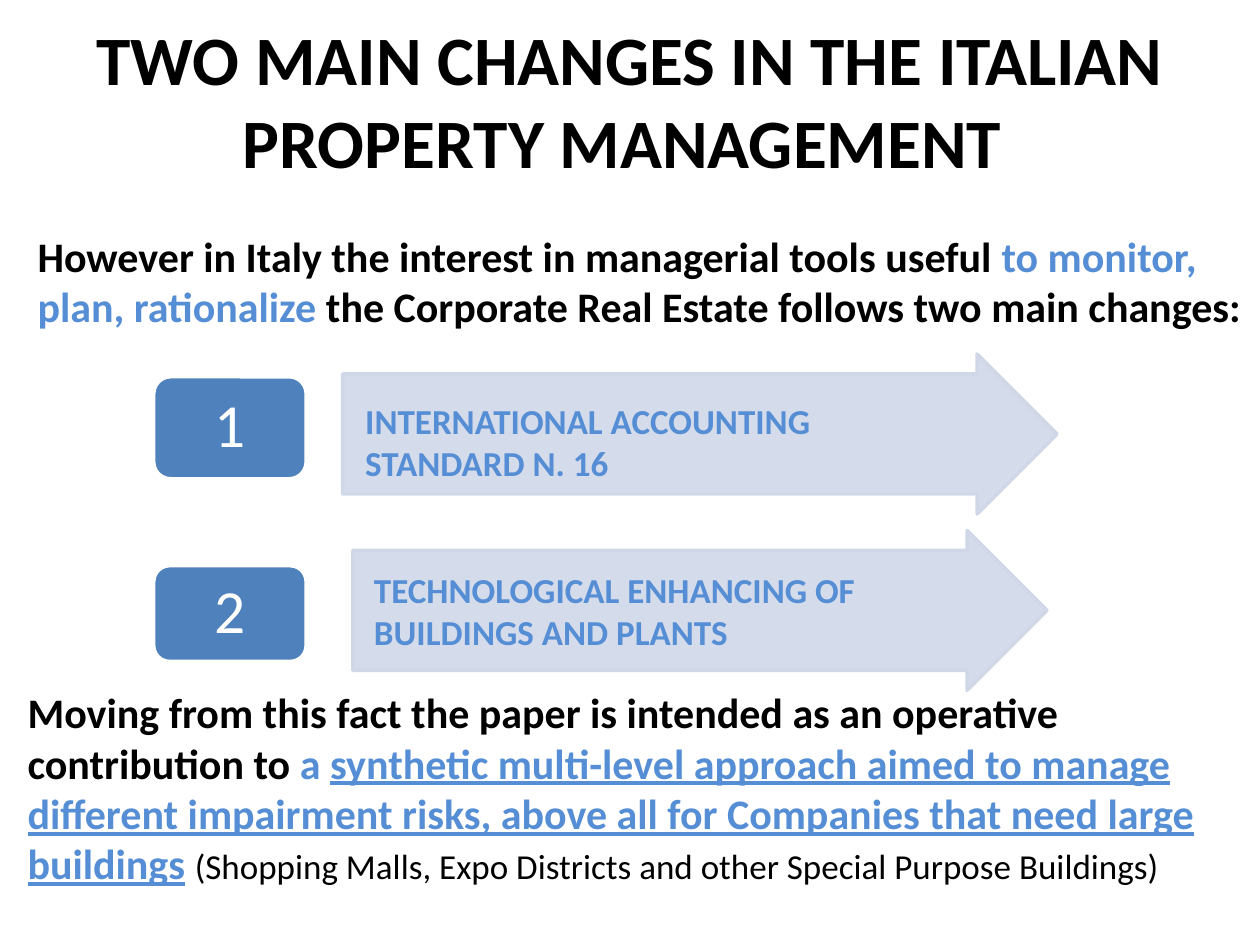
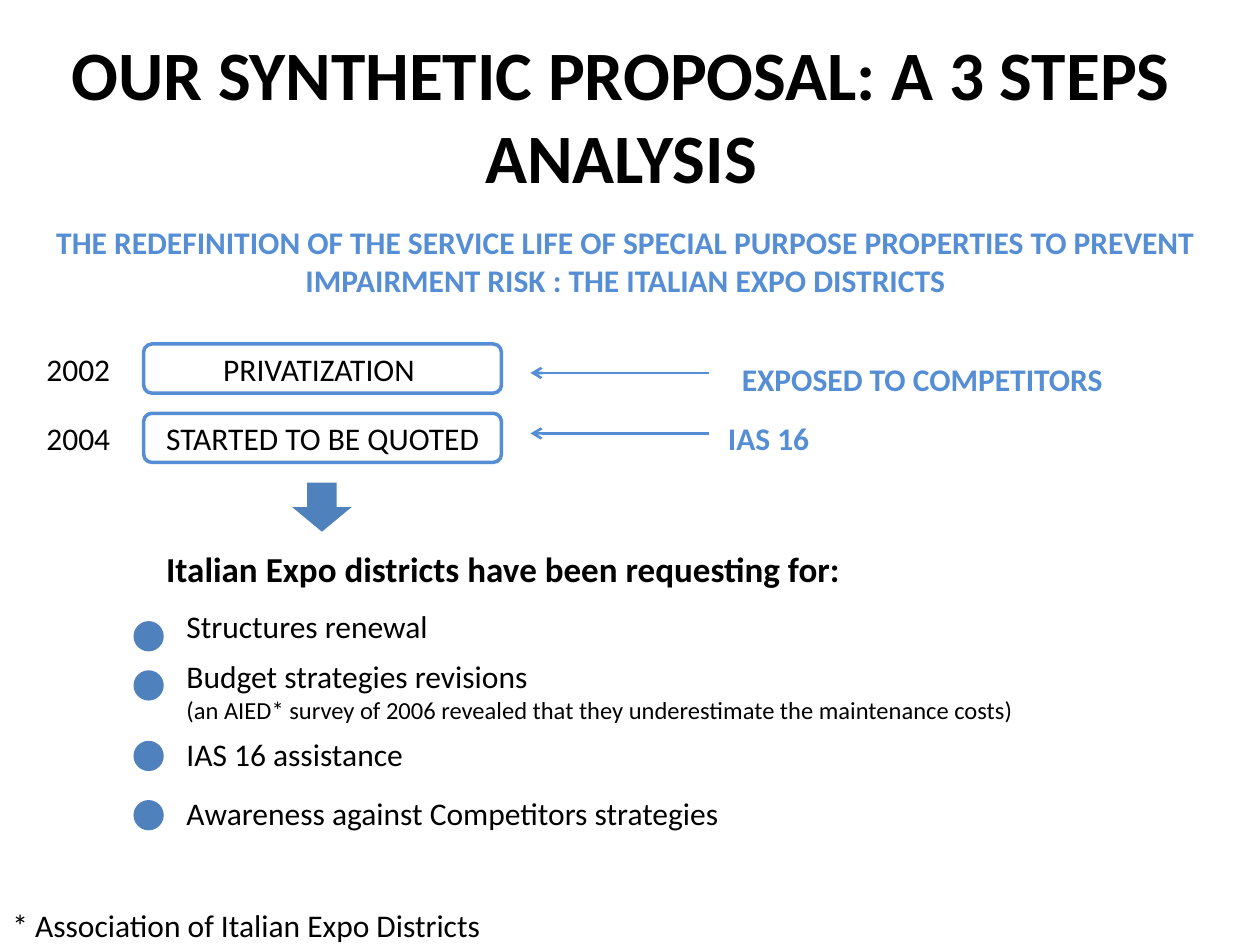
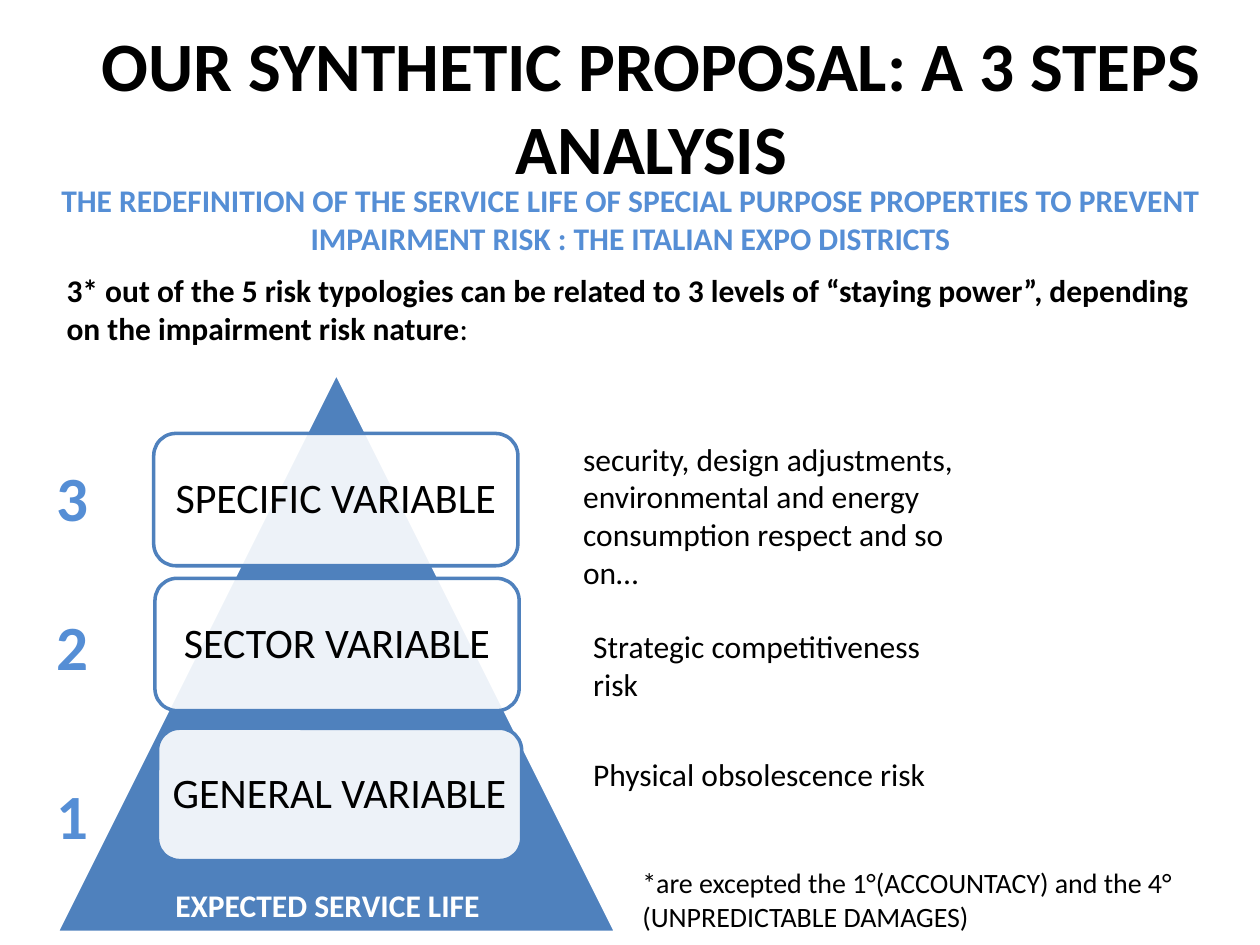
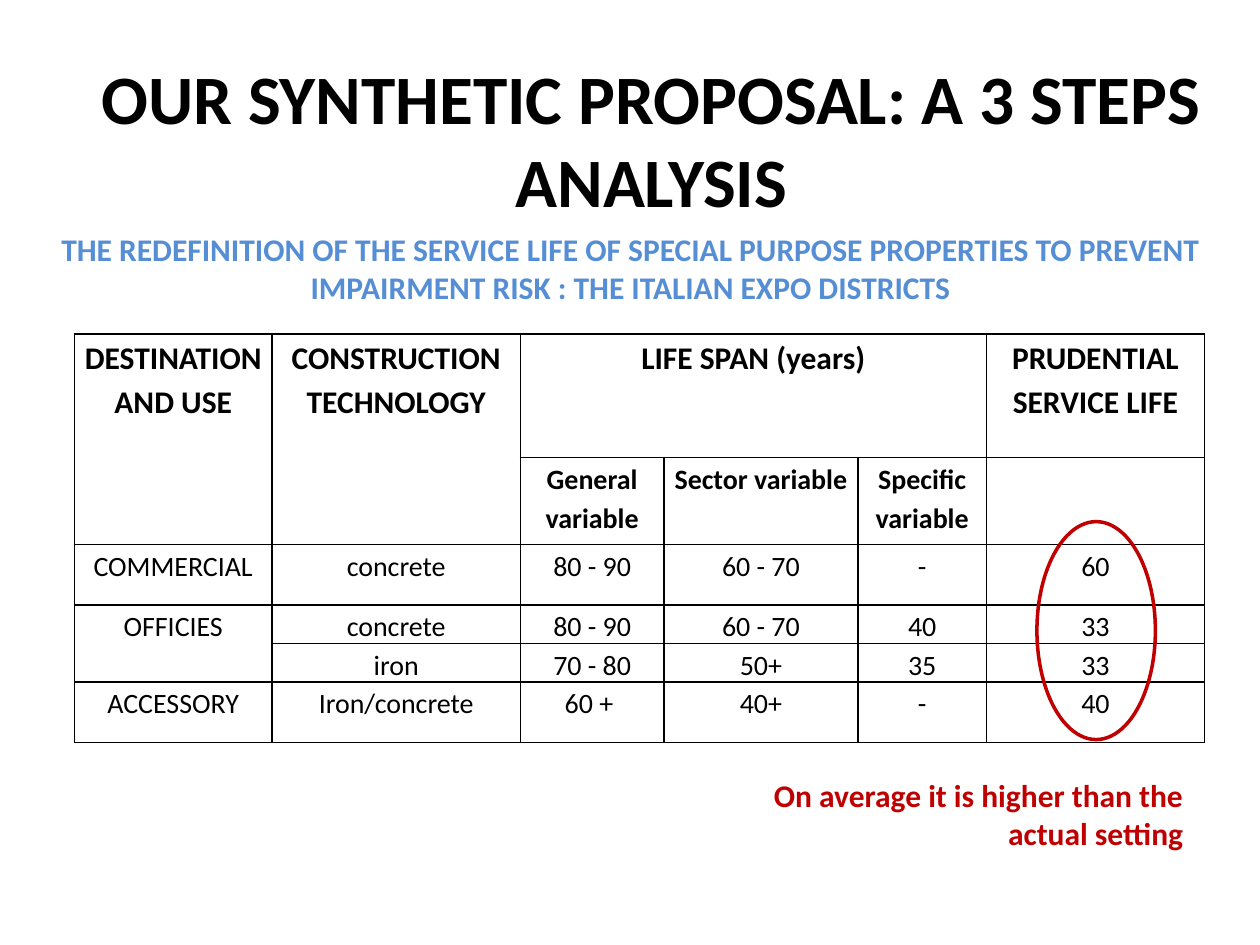
"""Build four slides on Italian property management and service life analysis."""
import lxml.etree
import pptx
import pptx.dml.color
import pptx.enum.shapes
import pptx.enum.text
import pptx.oxml.ns
import pptx.util

color = pptx.dml.color.RGBColor.from_string
qn = pptx.oxml.ns.qn
SubElement = lxml.etree.SubElement
Pt = pptx.util.Pt
SHAPE = pptx.enum.shapes.MSO_SHAPE
ALIGN = pptx.enum.text.PP_ALIGN

FONT = "Calibri"
BLACK, WHITE, RED = "000000", "FFFFFF", "C00000"
ACCENT, BLUE, PALE = "558ED5", "4F81BD", "D0D8E8"

deck = pptx.Presentation()
deck.slide_width = pptx.util.Inches(10)
deck.slide_height = pptx.util.Inches(7.5)
CELL = deck.slide_width / 100


def place(slide, kind, area, fill=None, line=None, opacity=100):
    """Add a preset shape, or a text box when kind is None, on the 100 x 75 grid."""
    spot = [round(value * CELL) for value in area]
    if kind is None:
        return slide.shapes.add_textbox(*spot)
    shape = slide.shapes.add_shape(kind, *spot)
    shape.shadow.inherit = False
    if fill:
        shape.fill.solid()
        shape.fill.fore_color.rgb = color(fill)
    else:
        shape.fill.background()
    if opacity < 100:
        tint = shape._element.spPr.find(".//" + qn("a:srgbClr"))
        SubElement(tint, qn("a:alpha"), val=str(opacity * 1000))
    if line:
        shape.line.color.rgb = color(line)
        shape.line.width = Pt(2)
    else:
        shape.line.fill.background()
    return shape


def write(frame, text, size, hue=BLACK, bold=False, align=ALIGN.LEFT):
    """Put one formatted paragraph into a text frame and return it."""
    frame.word_wrap = True
    paragraph = frame.paragraphs[0]
    if paragraph.text:
        paragraph = frame.add_paragraph()
    paragraph.text = text
    paragraph.alignment = align
    paragraph.font.name = FONT
    paragraph.font.size = Pt(size)
    paragraph.font.bold = bold
    paragraph.font.color.rgb = color(hue)
    return paragraph


PROPOSAL = "OUR SYNTHETIC PROPOSAL: A 3 STEPS ANALYSIS"
SUBTITLE = ("THE REDEFINITION OF THE SERVICE LIFE OF SPECIAL PURPOSE PROPERTIES "
            "TO PREVENT IMPAIRMENT RISK : THE ITALIAN EXPO DISTRICTS")
TITLE_ONLY, TITLE_AND_BODY = 5, 1
slides = []
for layout, heading, left, top, subtitle_spot in [
    (TITLE_ONLY, "TWO MAIN CHANGES IN THE ITALIAN PROPERTY MANAGEMENT ", 5, 1.6, None),
    (TITLE_AND_BODY, PROPOSAL, 4.3, 2.8, (1.6, 17.2)),
    (TITLE_ONLY, PROPOSAL, 6.7, 2.1, (2, 13.9)),
    (TITLE_ONLY, PROPOSAL, 6.7, 4.7, (2, 17.8)),
]:
    slide = deck.slides.add_slide(deck.slide_layouts[layout])
    title = slide.shapes.title
    title.left, title.top = round(left * CELL), round(top * CELL)
    title.width, title.height = round(90 * CELL), round(12.5 * CELL)
    title.text_frame.auto_size = pptx.enum.text.MSO_AUTO_SIZE.NONE
    write(title.text_frame, heading, 39.6, bold=True, align=ALIGN.CENTER)
    if subtitle_spot:
        subtitle = place(slide, None, (*subtitle_spot, 96.1, 7.1))
        write(subtitle.text_frame, SUBTITLE, 18, ACCENT, True, ALIGN.CENTER)
    slides.append(slide)
changes, requests, levels, life_spans = slides

for number, change, badge_area, arrow_area, label_area in [
    ("1", "INTERNATIONAL ACCOUNTING STANDARD N. 16",
     (12.2, 29.9, 12.1, 8.1), (27.2, 28.1, 56.7, 12.7), (28, 31.2, 44.1, 7.7)),
    ("2", "TECHNOLOGICAL ENHANCING OF BUILDINGS AND PLANTS",
     (12.2, 44.9, 12.1, 7.6), (28, 42.1, 55.1, 12.7), (28.7, 44.6, 47.3, 7.7)),
]:
    arrow = place(changes, SHAPE.RIGHT_ARROW, arrow_area, PALE, PALE, 90)
    arrow.adjustments[0], arrow.adjustments[1] = 0.75, 0.5
    badge = place(changes, SHAPE.ROUNDED_RECTANGLE, badge_area, BLUE, WHITE)
    write(badge.text_frame, number, 35, WHITE, align=ALIGN.CENTER).line_spacing = 0.9
    label = place(changes, None, label_area)
    write(label.text_frame, change, 20, ACCENT, True)

for area, opening, continuation in [
    ((2, 17.8, 98, 9.1), "However in Italy the interest in managerial tools useful ", [
        ("to monitor, plan, rationalize", ACCENT, False),
        (" the Corporate Real Estate follows two main changes:", BLACK, False)]),
    ((1.2, 54, 96.1, 17.2),
     "Moving from this fact the paper is intended as an operative contribution to ", [
        ("a ", ACCENT, False),
        ("synthetic multi-level approach aimed to manage different impairment risks, "
         "above all for Companies that need large buildings", ACCENT, True),
        (" ", ACCENT, False),
        ("(Shopping Malls, Expo Districts and other Special Purpose Buildings)",
         BLACK, False)]),
]:
    statement = write(place(changes, None, area).text_frame, opening, 24, bold=True)
    for words, hue, underlined in continuation:
        run = statement.add_run()
        run.text = words
        run.font.color.rgb = color(hue)
        run.font.underline = underlined
examples = statement.runs[-1]
examples.font.size = Pt(20)
examples.font.bold = False

for year, event, top, cause, cause_top, cause_width, arrow_row in [
    ("2002", "PRIVATIZATION ", 27.3, "EXPOSED TO COMPETITORS", 28.1, 37, 29.6),
    ("2004", "STARTED TO BE QUOTED", 32.8, "IAS 16", 32.8, 12.6, 34.4),
]:
    write(place(requests, None, (2.7, top, 8.7, 4)).text_frame, year, 18)
    milestone = place(requests, SHAPE.ROUNDED_RECTANGLE, (11.4, top, 28.4, 3.9), line=ACCENT)
    milestone.text_frame.margin_left = milestone.text_frame.margin_right = 0
    write(milestone.text_frame, event, 18, align=ALIGN.CENTER)
    reason = place(requests, None, (54.7, cause_top, cause_width, 4))
    write(reason.text_frame, cause, 18, ACCENT, True, ALIGN.CENTER)
    link = requests.shapes.add_connector(
        pptx.enum.shapes.MSO_CONNECTOR.STRAIGHT,
        *[round(value * CELL) for value in (56.3, arrow_row, 42.1, arrow_row)])
    link.line.color.rgb = color(ACCENT)
    link.line.width = Pt(1.5)
    SubElement(link.line._get_or_add_ln(), qn("a:tailEnd"), type="arrow")
    SubElement(link._element.spPr, qn("a:effectLst"))

place(requests, SHAPE.DOWN_ARROW, (23.2, 38.3, 4.7, 3.9), BLUE)
lead = place(requests, None, (12.2, 43, 69.3, 7.7))
write(lead.text_frame, "Italian Expo districts have been requesting for:", 20, bold=True)

request_list = requests.placeholders[1]
request_list.left, request_list.top = round(13.8 * CELL), round(47.7 * CELL)
request_list.width, request_list.height = round(71.7 * CELL), round(19 * CELL)
request_list.text_frame.auto_size = pptx.enum.text.MSO_AUTO_SIZE.NONE
for request, size, gap in [
    ("Structures renewal", 18, 0),
    ("Budget strategies revisions", 18, 7),
    ("(an AIED* survey of 2006 revealed that they underestimate the maintenance costs)", 14, 0),
    ("IAS 16 assistance", 18, 6),
    ("Awareness against Competitors strategies", 18, 12),
]:
    item = write(request_list.text_frame, request, size)
    item.space_before = Pt(gap)
    properties = item._p.get_or_add_pPr()
    properties.set("marL", "0")
    properties.set("indent", "0")
    SubElement(properties, qn("a:buNone"))
for dot_top in (49.3, 53.2, 58.8, 63.5):
    place(requests, SHAPE.OVAL, (10.6, dot_top, 2.4, 2.4), BLUE)
footnote = place(requests, None, (0, 71.4, 100, 4))
write(footnote.text_frame, "* Association of Italian Expo Districts", 18)

intro = write(
    place(levels, None, (4.3, 21, 91.4, 7.1)).text_frame,
    "3* out of the 5 risk typologies can be related to 3 levels of “staying power”, "
    "depending on the impairment risk nature", 18, bold=True)
colon = intro.add_run()
colon.text = ":"
colon.font.bold = False

place(levels, SHAPE.ISOSCELES_TRIANGLE, (4.5, 29.6, 44.4, 44.4), BLUE, WHITE)
for number, number_top, variable, left, top, risk, risk_area in [
    ("3", 35.9, "SPECIFIC VARIABLE", 12.2, 34.4,
     "security, design adjustments, environmental and energy consumption respect and so on…",
     (45.3, 34.4, 33.9, 13.1)),
    ("2", 47.7, "SECTOR VARIABLE", 12.3, 45.9,
     "Strategic competitiveness risk", (46.1, 49.3, 29.9, 7.1)),
    ("1", 61.1, "GENERAL VARIABLE", 12.5, 57.8,
     "Physical obsolescence risk", (46.1, 59.4, 29.9, 4)),
]:
    level = place(levels, SHAPE.ROUNDED_RECTANGLE, (left, top, 28.9, 10.5), WHITE, BLUE, 90)
    level.text_frame.margin_left = level.text_frame.margin_right = 0
    write(level.text_frame, variable, 24, align=ALIGN.CENTER).line_spacing = 0.9
    write(place(levels, None, (3.5, number_top, 7.1, 7.1)).text_frame, number, 36, ACCENT, True)
    write(place(levels, None, risk_area).text_frame, risk, 18)
base = place(levels, None, (6.7, 69.8, 38.6, 4))
write(base.text_frame, "EXPECTED SERVICE LIFE", 18, WHITE, True, ALIGN.CENTER)
exceptions = place(levels, None, (50, 68.2, 47.3, 6.4))
write(exceptions.text_frame,
      "*are excepted the 1°(ACCOUNTACY) and the 4° (UNPREDICTABLE DAMAGES)", 16)

records = [
    ["DESTINATION AND USE", "CONSTRUCTION TECHNOLOGY", "LIFE SPAN (years)", "", "",
     "PRUDENTIAL SERVICE LIFE"],
    ["", "", "General variable", "Sector variable", "Specific variable", ""],
    ["COMMERCIAL", "concrete", "80 - 90", "60 - 70", "-", "60"],
    ["OFFICIES", "concrete", "80 - 90", "60 - 70", "40", "33"],
    ["", "iron", "70 - 80", "50+", "35", "33"],
    ["ACCESSORY", "Iron/concrete", "60 + ", "40+", "-", "40"],
]
spans = life_spans.shapes.add_table(
    6, 6, *[round(value * CELL) for value in (5.9, 26.5, 89.8, 31.8)]).table
spans.first_row = spans.horz_banding = False
for column, width in zip(spans.columns, (15.7, 19.7, 11.4, 15.4, 10.2, 17.3)):
    column.width = round(width * CELL)
for row, height in zip(spans.rows, (9.8, 4.8, 4.8, 2.4, 2.4, 4.8)):
    row.height = round(height * CELL)
for first, last in [((0, 0), (1, 0)), ((0, 1), (1, 1)), ((0, 2), (0, 4)), ((3, 0), (4, 0))]:
    spans.cell(*first).merge(spans.cell(*last))
for row_index, record in enumerate(records):
    for column_index, entry in enumerate(record):
        cell = spans.cell(row_index, column_index)
        cell.margin_left = cell.margin_right = round(0.7 * CELL)
        cell.margin_top = cell.margin_bottom = 0
        for side in ("a:lnL", "a:lnR", "a:lnT", "a:lnB"):
            border = SubElement(cell._tc.get_or_add_tcPr(), qn(side), w=str(Pt(1)))
            SubElement(SubElement(border, qn("a:solidFill")), qn("a:srgbClr"), val=BLACK)
        cell.fill.background()
        if entry:
            write(cell.text_frame, entry, 18 if row_index == 0 else 16,
                  bold=row_index < 2, align=ALIGN.CENTER).line_spacing = 1.15

place(life_spans, SHAPE.OVAL, (82.3, 41.4, 9.4, 17.3), line=RED)
remark = place(life_spans, None, (56.3, 61.1, 38.6, 7.1))
write(remark.text_frame, "On average it is higher than the actual setting",
      18, RED, True, ALIGN.RIGHT)

deck.save("out.pptx")
